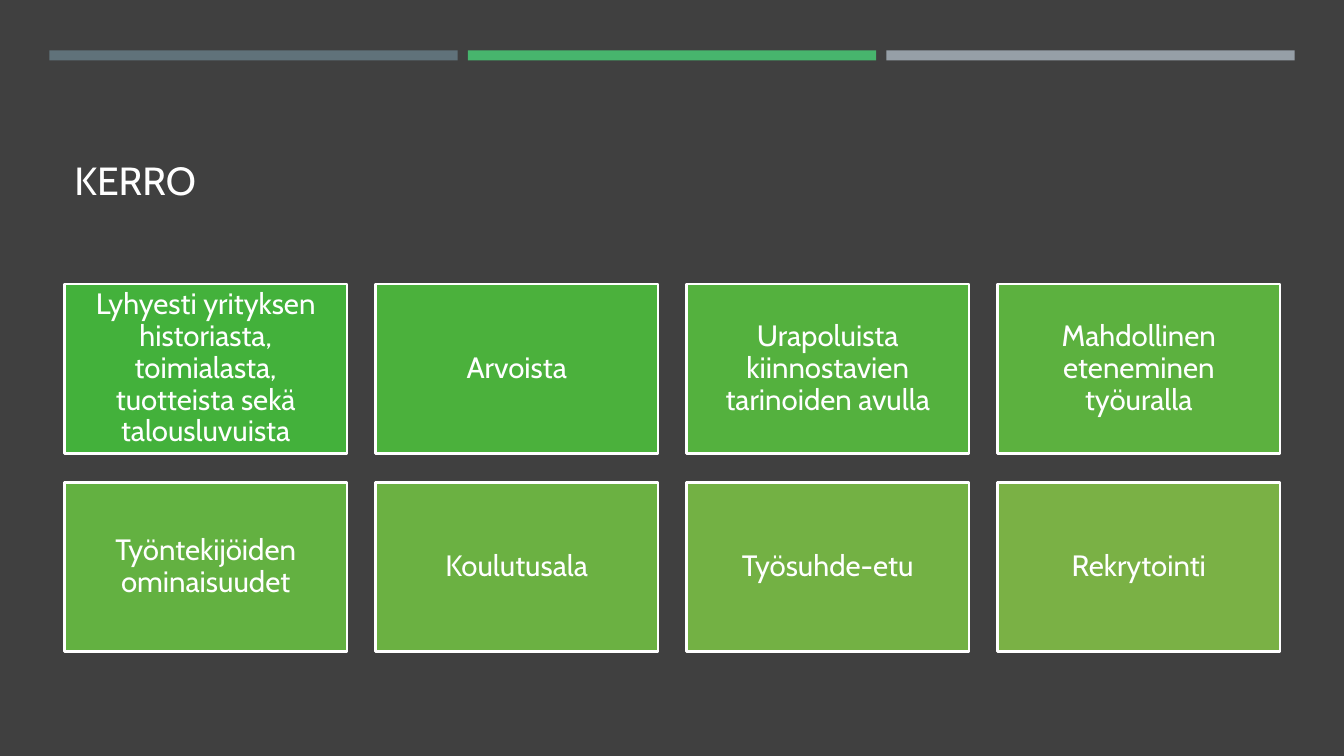
from pptx import Presentation
from pptx import util as u
from pptx.dml.color import RGBColor
from pptx.enum import shapes, text

WIDTH, HEIGHT = 13.33, 7.5
FONT = "Cabin"
COLORS = {
    "backdrop": "000000", "panel": "404040", "white": "FFFFFF",
    "slate": "60727A", "green": "47B56D", "silver": "969FA7",
}
TOPICS = [
    ("Lyhyesti yrityksen historiasta, toimialasta, tuotteista sekä talousluvuista", "43B13B"),
    ("Arvoista", "4BB13C"),
    ("Urapoluista kiinnostavien tarinoiden avulla", "54B13E"),
    ("Mahdollinen eteneminen työuralla", "5CB13F"),
    ("Työntekijöiden ominaisuudet", "63B141"),
    ("Koulutusala", "6BB142"),
    ("Työsuhde-etu", "73B144"),
    ("Rekrytointi", "7AB145"),
]
COLUMNS = 4
GRID_LEFT, GRID_TOP = 0.64, 2.82
TILE_WIDTH, TILE_HEIGHT, TILE_GAP = 2.8, 1.68, 0.285
BAR_LEFT, BAR_TOP, BAR_WIDTH, BAR_HEIGHT, BAR_GAP = 0.49, 0.5, 4.05, 0.1, 0.1


def rgb(value):
    return RGBColor.from_string(value)


def add_rectangle(page, left, top, width, height, fill):
    box = page.shapes.add_shape(
        shapes.MSO_SHAPE.RECTANGLE,
        u.Inches(left), u.Inches(top), u.Inches(width), u.Inches(height))
    box.shadow.inherit = False
    box.fill.solid()
    box.fill.fore_color.rgb = rgb(fill)
    box.line.fill.background()
    return box


def write(box, wording, size, align, anchor):
    frame = box.text_frame
    frame.word_wrap = True
    frame.vertical_anchor = anchor
    para = frame.paragraphs[0]
    para.alignment = align
    para.line_spacing = 0.9
    span = para.add_run()
    span.text = wording
    span.font.name = FONT
    span.font.size = u.Pt(size)
    span.font.color.rgb = rgb(COLORS["white"])


def add_title(page, wording):
    box = page.shapes.add_textbox(
        u.Inches(GRID_LEFT), u.Inches(0.77), u.Inches(12.06), u.Inches(1.3))
    write(box, wording, 28, text.PP_ALIGN.LEFT, text.MSO_ANCHOR.BOTTOM)


def add_bars(page):
    for column, name in enumerate(("slate", "green", "silver")):
        left = BAR_LEFT + column * (BAR_WIDTH + BAR_GAP)
        add_rectangle(page, left, BAR_TOP, BAR_WIDTH, BAR_HEIGHT, COLORS[name])


def add_tile(page, index, wording, fill):
    """Place a topic tile in the grid, counting row by row."""
    row, column = divmod(index, COLUMNS)
    tile = add_rectangle(
        page,
        GRID_LEFT + column * (TILE_WIDTH + TILE_GAP),
        GRID_TOP + row * (TILE_HEIGHT + TILE_GAP),
        TILE_WIDTH, TILE_HEIGHT, fill)
    tile.line.color.rgb = rgb(COLORS["white"])
    tile.line.width = u.Pt(1.75)
    frame = tile.text_frame
    frame.margin_left = frame.margin_right = u.Inches(0.09)
    frame.margin_top = frame.margin_bottom = u.Inches(0.09)
    write(tile, wording, 21, text.PP_ALIGN.CENTER, text.MSO_ANCHOR.MIDDLE)


def main():
    deck = Presentation()
    deck.slide_width, deck.slide_height = u.Inches(WIDTH), u.Inches(HEIGHT)
    page = deck.slides.add_slide(deck.slide_layouts[6])
    page.background.fill.solid()
    page.background.fill.fore_color.rgb = rgb(COLORS["backdrop"])
    add_rectangle(page, 0, 0, WIDTH, HEIGHT, COLORS["panel"])
    add_title(page, "KERRO")
    add_bars(page)
    for index, (wording, fill) in enumerate(TOPICS):
        add_tile(page, index, wording, fill)
    deck.save("out.pptx")


if __name__ == "__main__":
    main()
